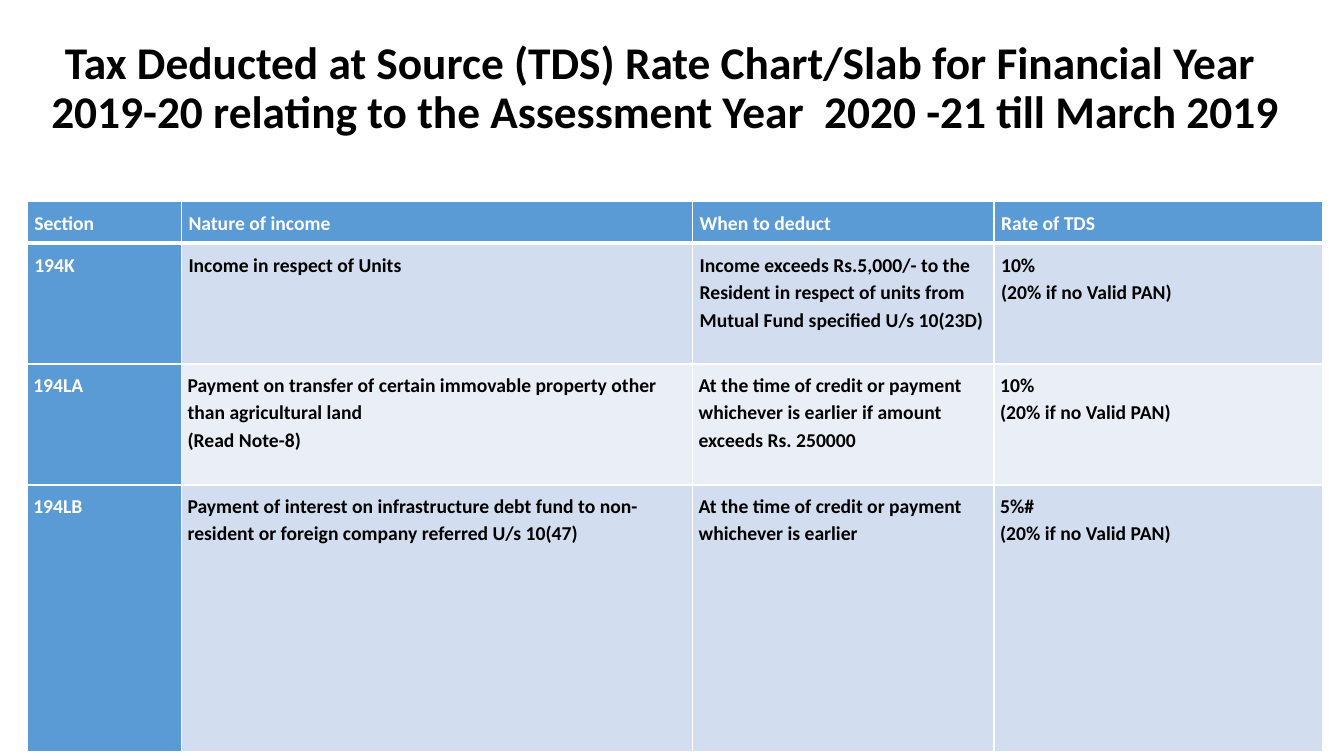
import dataclasses
import pptx
import pptx.dml.color
import pptx.enum.text
import pptx.oxml
import pptx.oxml.ns
import pptx.util

PX = 9144  # EMU per px, 100 px to the inch
FONT = "Calibri"
COLORS = {"white": "FFFFFF", "black": "000000", "blue": "5B9BD5",
          "band": "D2DEEF", "pale": "EAEFF7"}
ALIGN = pptx.enum.text.PP_ALIGN
ANCHOR = pptx.enum.text.MSO_ANCHOR
TITLE = ("Tax Deducted at Source (TDS) Rate Chart/Slab for Financial Year  2019-20 "
         "relating to the Assessment Year  2020 -21 till March 2019")
NO_PAN = "(20% if no Valid PAN)"
COLS = (153, 507, 299, 326)


@dataclasses.dataclass
class Row:
    high: int
    inset: int
    fill: str
    cells: tuple[str, ...]
    last: ALIGN = ALIGN.LEFT  # alignment of paragraphs after the first
    top: int = 1
    base: int = 1


ROWS = (
    Row(40, 7, "blue", ("Section", "Nature of income", "When to deduct", "Rate of TDS"),
        base=3),
    Row(120, 7, "band", (
        "194K", "Income in respect of Units",
        "Income exceeds Rs.5,000/- to the Resident in respect of units from "
        "Mutual Fund specified U/s 10(23D)",
        f"10%\n{NO_PAN}"), top=3),
    Row(120, 6, "pale", (
        "194LA",
        "Payment on transfer of certain immovable property other than "
        "agricultural land\n(Read Note-8)",
        "At the time of credit or payment whichever is earlier if amount "
        "exceeds Rs. 250000",
        f"10%\n{NO_PAN}"), ALIGN.JUSTIFY),
    Row(264, 6, "band", (
        "194LB",
        "Payment of interest on infrastructure debt fund to non-resident or "
        "foreign company referred U/s 10(47)",
        "At the time of credit or payment whichever is earlier",
        f"5%#\n{NO_PAN}"), ALIGN.JUSTIFY),
)


def px(count: int) -> pptx.util.Emu:
    return pptx.util.Emu(count * PX)


def rgb(name: str) -> pptx.dml.color.RGBColor:
    return pptx.dml.color.RGBColor.from_string(COLORS[name])


def write(frame, text: str, *, size: float, color: str, space: float,
          first: ALIGN = ALIGN.LEFT, last: ALIGN = ALIGN.LEFT) -> None:
    """Fill a text frame with one bold paragraph per line of text."""
    frame.text = text
    for i, para in enumerate(frame.paragraphs):
        para.alignment = last if i else first
        para.line_spacing = space
        for run in para.runs:
            font = run.font
            font.name, font.size, font.bold = FONT, pptx.util.Pt(size), True
            font.color.rgb = rgb(color)


def edge(cell, side: str, width: int) -> None:
    """Draw one white border; call before the cell is filled."""
    space = pptx.oxml.ns.nsdecls("a")
    cell._tc.get_or_add_tcPr().append(pptx.oxml.parse_xml(
        f'<a:ln{side} {space} w="{pptx.util.Pt(width)}"><a:solidFill>'
        f'<a:srgbClr val="{COLORS["white"]}"/></a:solidFill></a:ln{side}>'))


def add_title(slide) -> None:
    title = slide.shapes.title
    title.left, title.top, title.width, title.height = map(px, (27, 35, 1266, 156))
    frame = title.text_frame
    frame.word_wrap = True
    frame.auto_size = pptx.enum.text.MSO_AUTO_SIZE.NONE
    frame.vertical_anchor = ANCHOR.BOTTOM
    frame.margin_bottom = px(54)
    write(frame, TITLE, size=32.4, color="black", space=0.9, first=ALIGN.CENTER)


def add_rates(slide) -> None:
    high = sum(row.high for row in ROWS)
    table = slide.shapes.add_table(len(ROWS), len(COLS), px(27), px(200),
                                   px(sum(COLS)), px(high)).table
    for col, wide in zip(table.columns, COLS):
        col.width = px(wide)
    for r, row in enumerate(ROWS):
        table.rows[r].height = px(row.high)
        for c, text in enumerate(row.cells):
            cell = table.cell(r, c)
            head = r == 0 or c == 0
            for side, width in zip("LRTB", (1, 1, row.top, row.base)):
                edge(cell, side, width)
            cell.fill.solid()
            cell.fill.fore_color.rgb = rgb("blue" if head else row.fill)
            cell.margin_left = cell.margin_right = px(row.inset)
            cell.margin_top = cell.margin_bottom = px(row.inset)
            cell.vertical_anchor = ANCHOR.TOP
            write(cell.text_frame, text, size=14, space=1.15,
                  color="white" if head else "black", last=row.last)


def main() -> None:
    deck = pptx.Presentation()
    deck.slide_width, deck.slide_height = px(1333), px(750)
    slide = deck.slides.add_slide(deck.slide_layouts[0])
    spare = slide.placeholders[1].element
    spare.getparent().remove(spare)
    add_title(slide)
    add_rates(slide)
    deck.save("out.pptx")


if __name__ == "__main__":
    main()
